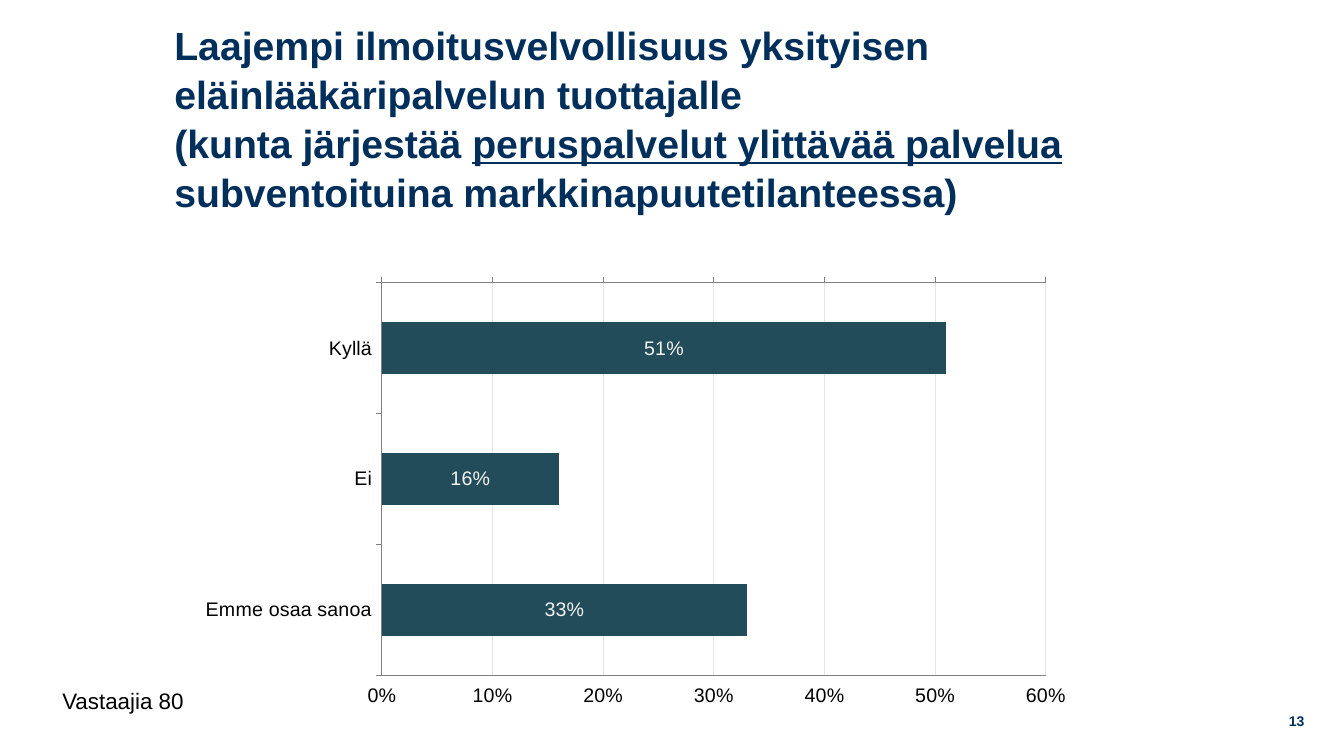
from dataclasses import dataclass

import lxml.etree
import pptx
import pptx.chart.data
import pptx.dml.color
import pptx.enum.chart
import pptx.enum.text
import pptx.oxml
import pptx.oxml.ns
import pptx.util
from pptx.util import Cm, Pt

FONT = "Arial"
NAVY, TEAL, BLACK, WHITE = "002F5B", "234C5A", "000000", "FFFFFF"
LABEL, GRID, AXIS = "F2F2F2", "E6E6E6", "808080"
ALIGN = pptx.enum.text.PP_ALIGN
ANCHOR = pptx.enum.text.MSO_ANCHOR


@dataclass
class Note:
    text: str
    left: float
    top: float
    width: float
    height: float
    size: int
    color: str
    bold: bool
    align: ALIGN
    anchor: ANCHOR


NOTES = [
    Note("13", 25.5, 17.65, 7.62, 1.02, 10, NAVY, True, ALIGN.RIGHT, ANCHOR.MIDDLE),
    Note("Vastaajia 80", 1.32, 17.2, 3.78, 0.94, 16, BLACK, False, ALIGN.LEFT, ANCHOR.TOP),
]
TITLE_PARTS = [
    ("Laajempi ilmoitusvelvollisuus yksityisen eläinlääkäripalvelun tuottajalle", False),
    ("\n", False),
    ("(kunta järjestää ", False),
    ("peruspalvelut ylittävää palvelua", True),
    (" subventoituina markkinapuutetilanteessa)", False),
]
ANSWERS = {"Kyllä": 0.51, "Ei": 0.16, "Emme osaa sanoa": 0.33}


def rgb(value: str) -> pptx.dml.color.RGBColor:
    return pptx.dml.color.RGBColor.from_string(value)


def style_font(font, size: float, color: str, bold: bool = False) -> None:
    font.name, font.size, font.bold = FONT, Pt(size), bold
    font.color.rgb = rgb(color)


def style_line(line, color: str) -> None:
    line.color.rgb = rgb(color)
    line.width = Pt(0.75)


def add_title(page) -> None:
    title = page.shapes.title
    title.left, title.top, title.width, title.height = Cm(4.14), Cm(1.12), Cm(27.03), Cm(3.68)
    frame = title.text_frame
    frame.word_wrap = True
    frame.auto_size = pptx.enum.text.MSO_AUTO_SIZE.NONE
    frame.vertical_anchor = ANCHOR.MIDDLE
    para = frame.paragraphs[0]
    para.alignment = ALIGN.LEFT
    para.line_spacing = 1.04
    style_font(para.font, 28, NAVY, True)
    for text, underlined in TITLE_PARTS:
        if text == "\n":
            para.add_line_break()
            continue
        span = para.add_run()
        span.text = text
        if underlined:
            span.font.underline = True


def add_note(page, note: Note) -> None:
    box = page.shapes.add_textbox(Cm(note.left), Cm(note.top), Cm(note.width), Cm(note.height))
    frame = box.text_frame
    frame.word_wrap = True
    frame.vertical_anchor = note.anchor
    para = frame.paragraphs[0]
    para.text = note.text
    para.alignment = note.align
    style_font(para.font, note.size, note.color, note.bold)


def frame_plot(chart) -> None:
    """Fix the inner plot area and give it a fill and a border."""
    namespaces = pptx.oxml.ns.nsdecls("c", "a")
    area = chart.plots[0]._element.getparent()
    for old in area.findall(pptx.oxml.ns.qn("c:layout")):
        area.remove(old)
    places = {"x": 0.217, "y": 0.018, "w": 0.74, "h": 0.888}
    modes = '<c:xMode val="edge"/><c:yMode val="edge"/>'
    sizes = "".join(f'<c:{key} val="{value}"/>' for key, value in places.items())
    area.insert(0, pptx.oxml.parse_xml(
        f'<c:layout {namespaces}><c:manualLayout><c:layoutTarget val="inner"/>'
        f"{modes}{sizes}</c:manualLayout></c:layout>"))
    area.append(pptx.oxml.parse_xml(
        f'<c:spPr {namespaces}><a:solidFill><a:srgbClr val="{WHITE}"/></a:solidFill>'
        f'<a:ln w="{Pt(0.75)}"><a:solidFill><a:srgbClr val="{AXIS}"/></a:solidFill></a:ln></c:spPr>'))


def add_answers(page) -> None:
    enums = pptx.enum.chart
    data = pptx.chart.data.CategoryChartData(number_format="0%")
    data.categories = list(ANSWERS)
    data.add_series("Series 1", list(ANSWERS.values()))
    chart = page.shapes.add_chart(
        enums.XL_CHART_TYPE.BAR_CLUSTERED, Cm(4.72), Cm(6.93), Cm(22.61), Cm(11.13), data).chart
    chart.has_legend = chart.has_title = False
    style_font(chart.font, 14, BLACK)

    # Axes: reversed answers put the value axis on top, its labels stay below
    for axis in (chart.category_axis, chart.value_axis):
        axis.major_tick_mark = enums.XL_TICK_MARK.OUTSIDE
        axis.minor_tick_mark = enums.XL_TICK_MARK.NONE
        style_line(axis.format.line, AXIS)
    chart.category_axis.reverse_order = True
    values = chart.value_axis
    values.minimum_scale, values.maximum_scale, values.major_unit = 0, 0.6, 0.1
    values.tick_label_position = enums.XL_TICK_LABEL_POSITION.HIGH
    values.tick_labels.number_format = "0%"
    values.tick_labels.number_format_is_linked = False
    values.has_major_gridlines = True
    style_line(values.major_gridlines.format.line, GRID)

    # Bars and their labels
    plot = chart.plots[0]
    plot.gap_width = 150
    plot.vary_by_categories = False
    bars = plot.series[0]
    bars.format.fill.solid()
    bars.format.fill.fore_color.rgb = rgb(TEAL)
    labels = bars.data_labels
    labels.show_value = True
    labels.number_format = "0%"
    labels.number_format_is_linked = False
    labels.position = enums.XL_LABEL_POSITION.CENTER
    style_font(labels.font, 14, LABEL)
    frame_plot(chart)


def main() -> None:
    deck = pptx.Presentation()
    deck.slide_width, deck.slide_height = Cm(33.87), Cm(19.05)
    page = deck.slides.add_slide(deck.slide_layouts.get_by_name("Title Only"))
    add_title(page)
    add_answers(page)
    for note in NOTES:
        add_note(page, note)
    deck.save("out.pptx")


if __name__ == "__main__":
    main()
